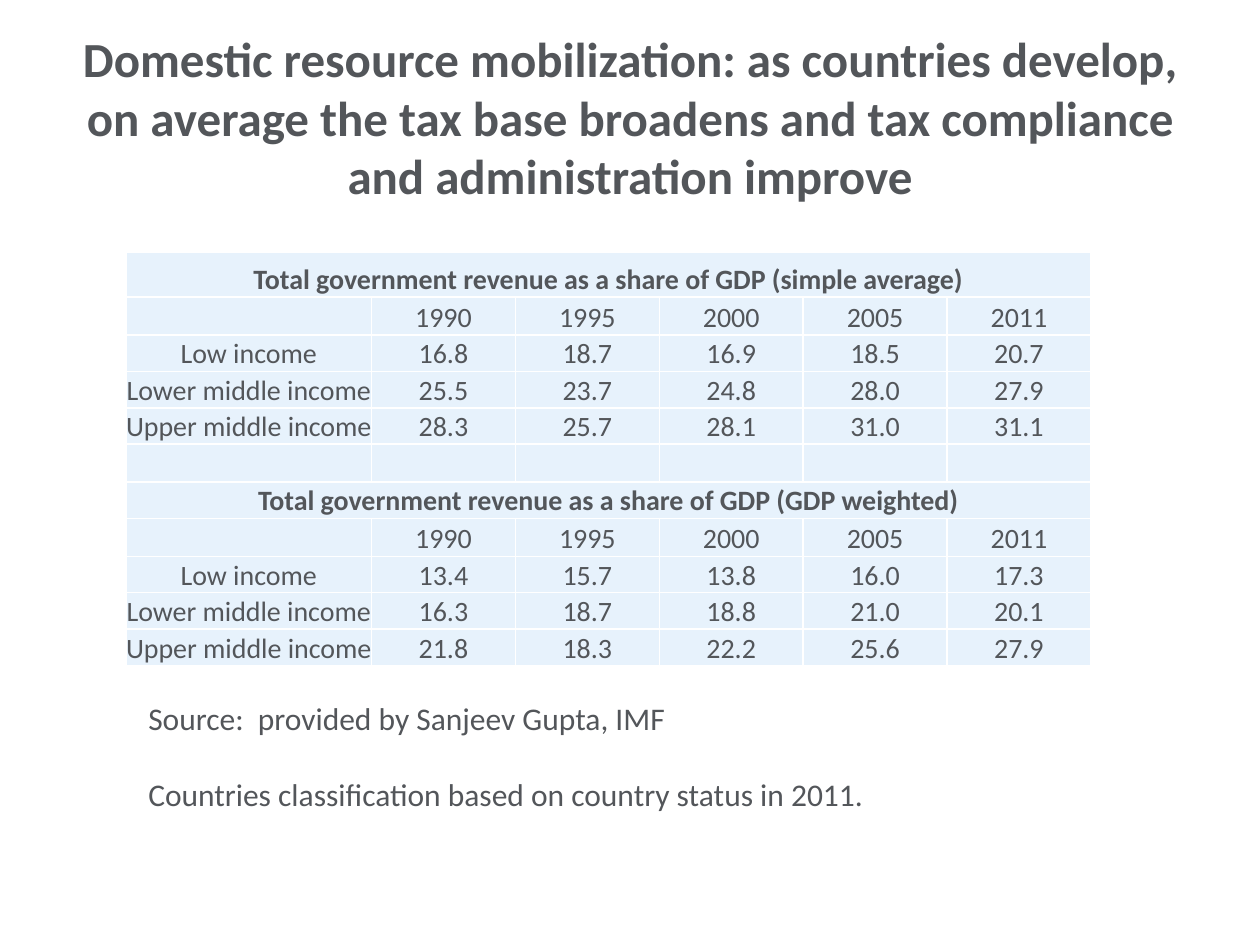
from dataclasses import dataclass

from lxml import etree
from pptx import Presentation
from pptx.dml.color import RGBColor
from pptx.enum.text import MSO_ANCHOR, PP_ALIGN
from pptx.oxml.ns import qn
from pptx.util import Cm, Pt

CENTER, LEFT = PP_ALIGN.CENTER, PP_ALIGN.LEFT
TOP, MIDDLE, BOTTOM = MSO_ANCHOR.TOP, MSO_ANCHOR.MIDDLE, MSO_ANCHOR.BOTTOM

GREY = RGBColor(0x53, 0x56, 0x5A)
PALE = RGBColor(0xE7, 0xF2, 0xFC)
WHITE = RGBColor(0xFF, 0xFF, 0xFF)
FONT = "Calibri"

LABEL_W, YEAR_W = 4.95, 2.9
TABLE_H, HEAD_H = 8.25, 0.91
YEARS = ("1990", "1995", "2000", "2005", "2011")


@dataclass
class Block:
    title: str
    rows: dict[str, tuple[float, ...]]


BLOCKS = (
    Block("Total government revenue as a share of GDP (simple average)", {
        "Low income": (16.8, 18.7, 16.9, 18.5, 20.7),
        "Lower middle income": (25.5, 23.7, 24.8, 28.0, 27.9),
        "Upper middle income": (28.3, 25.7, 28.1, 31.0, 31.1),
    }),
    Block("Total government revenue as a share of GDP (GDP weighted)", {
        "Low income": (13.4, 15.7, 13.8, 16.0, 17.3),
        "Lower middle income": (16.3, 18.7, 18.8, 21.0, 20.1),
        "Upper middle income": (21.8, 18.3, 22.2, 25.6, 27.9),
    }),
)


def write(frame, *lines: str, size: float, bold: bool = False,
          align=LEFT, gap: float = 0) -> None:
    """Fill a text frame, one paragraph for each line."""
    for i, line in enumerate(lines):
        para = frame.add_paragraph() if i else frame.paragraphs[0]
        para.alignment = align
        if i:
            para.space_before = Pt(gap)
        run = para.add_run()
        run.text = line
        font = run.font
        font.name, font.size, font.bold = FONT, Pt(size), bold
        font.color.rgb = GREY


def add_box(slide, x: float, y: float, w: float, h: float, anchor=TOP):
    frame = slide.shapes.add_textbox(Cm(x), Cm(y), Cm(w), Cm(h)).text_frame
    frame.word_wrap = True
    frame.vertical_anchor = anchor
    return frame


def style(cell) -> None:
    """Give a cell thin white borders, a pale fill and no margins."""
    props = cell._tc.get_or_add_tcPr()
    for side in ("a:lnL", "a:lnR", "a:lnT", "a:lnB"):
        line = etree.SubElement(props, qn(side), w=str(Pt(1)))
        fill = etree.SubElement(line, qn("a:solidFill"))
        etree.SubElement(fill, qn("a:srgbClr"), val=str(WHITE))
    cell.fill.solid()
    cell.fill.fore_color.rgb = PALE
    cell.margin_left = cell.margin_right = 0
    cell.margin_top = cell.margin_bottom = 0
    cell.vertical_anchor = BOTTOM


def list_rows(blocks: tuple[Block, ...]) -> list[tuple[str, ...]]:
    """Lay the blocks out as rows, with an empty row between them."""
    rows = []
    for block in blocks:
        if rows:
            rows.append(("",) * (len(YEARS) + 1))
        rows += [(block.title,), ("", *YEARS)]
        rows += [(name, *(f"{v:.1f}" for v in vals))
                 for name, vals in block.rows.items()]
    return rows


def add_grid(slide, x: float, y: float, blocks: tuple[Block, ...]) -> None:
    rows = list_rows(blocks)
    cols = len(YEARS) + 1
    width = LABEL_W + YEAR_W * len(YEARS)
    table = slide.shapes.add_table(
        len(rows), cols, Cm(x), Cm(y), Cm(width), Cm(TABLE_H)).table
    table.first_row = table.horz_banding = False
    for i, col in enumerate(table.columns):
        col.width = Cm(YEAR_W if i else LABEL_W)
    row_h = (TABLE_H - HEAD_H) / (len(rows) - 1)
    for r, texts in enumerate(rows):
        table.rows[r].height = Cm(row_h if r else HEAD_H)
        for c in range(cols):
            style(table.cell(r, c))
        head = len(texts) == 1
        if head:
            table.cell(r, 0).merge(table.cell(r, cols - 1))
        for c, text in enumerate(texts):
            write(table.cell(r, c).text_frame, text,
                  size=16, bold=head, align=CENTER)


def main() -> None:
    deck = Presentation()
    deck.slide_width, deck.slide_height = Cm(25.4), Cm(19.05)
    slide = deck.slides.add_slide(deck.slide_layouts[6])

    # Title
    write(add_box(slide, 1.27, 0.76, 22.86, 3.18, MIDDLE),
          "Domestic resource mobilization: as countries develop, on average "
          "the tax base broadens and tax compliance and administration improve",
          size=28, bold=True, align=CENTER)

    # Revenue table
    add_grid(slide, 2.54, 5.08, BLOCKS)

    # Source and note
    write(add_box(slide, 2.74, 13.97, 19.25, 2.57),
          "Source:  provided by Sanjeev Gupta, IMF",
          "Countries classification based on country status in 2011.",
          size=18, gap=22)

    deck.save("out.pptx")


if __name__ == "__main__":
    main()
